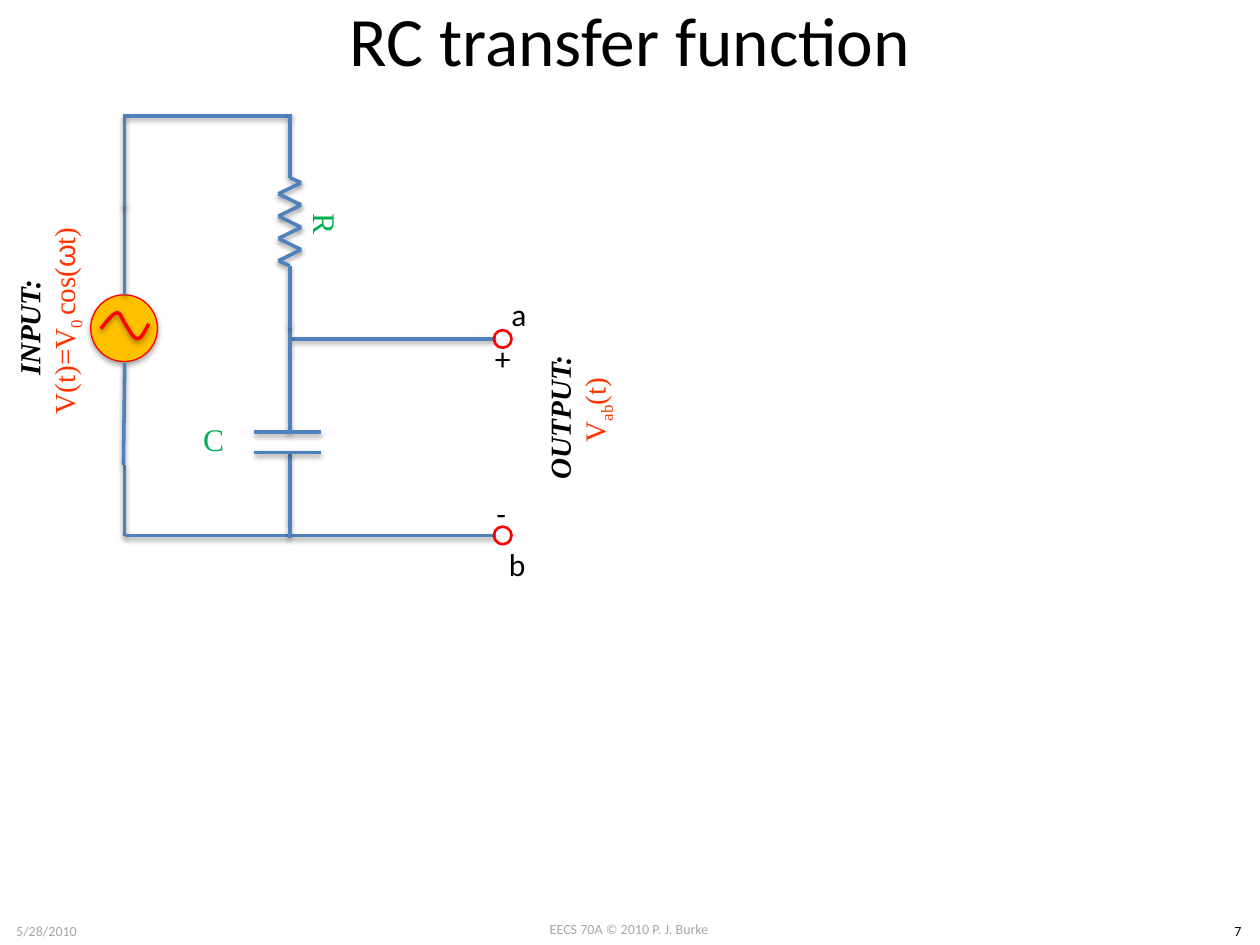
from itertools import pairwise

from lxml import etree
from pptx import Presentation
from pptx.dml.color import RGBColor
from pptx.enum import shapes, text
from pptx.oxml import ns
from pptx.util import Inches, Pt

COLORS = {"wire": "4F81BD", "red": "FF0000", "source": "FFC000", "signal": "FF3300",
          "part": "00B050", "footer": "A6A6A6", "black": "000000"}
LEFT_X, MID_X, PORT_X = 0.99, 2.3, 3.94
TOP_Y, A_Y, B_Y = 0.92, 2.69, 4.25

HEADING = {"size": 16.6, "name": "Times New Roman", "bold": True, "italic": True}
SIGNAL = {"size": 16.6, "name": "Times New Roman", "color": "signal"}
PART = {"size": 18, "name": "Times New Roman", "color": "part"}
PORT = {"size": 18}
FOOTER = {"size": 8, "color": "footer"}
SUBSCRIPT = {"baseline": -25}


def rgb(name):
    return RGBColor.from_string(COLORS[name])


def add_shadow(s, alpha=38, distance=1.6):
    """Give a shape a soft black shadow that falls straight down."""
    effects = etree.SubElement(s._element.spPr, ns.qn("a:effectLst"))
    outer = etree.SubElement(effects, ns.qn("a:outerShdw"), blurRad=str(Pt(3.1)),
                             dist=str(Pt(distance)), dir="5400000", rotWithShape="0")
    color = etree.SubElement(outer, ns.qn("a:srgbClr"), val=COLORS["black"])
    etree.SubElement(color, ns.qn("a:alpha"), val=str(alpha * 1000))


def add_wire(parent, start, end):
    s = parent.add_connector(shapes.MSO_CONNECTOR.STRAIGHT,
                             *(Inches(v) for v in (*start, *end)))
    s.line.color.rgb = rgb("wire")
    s.line.width = Pt(2)
    add_shadow(s)


def add_path(parent, *points):
    """Join the points, one wire for each pair of neighbours."""
    for start, end in pairwise(points):
        add_wire(parent, start, end)


def add_circle(parent, left, top, size, width, fill=None):
    s = parent.add_shape(shapes.MSO_SHAPE.OVAL,
                         *(Inches(v) for v in (left, top, size, size)))
    s.line.color.rgb = rgb("red")
    s.line.width = Pt(width)
    if fill:
        s.fill.solid()
        s.fill.fore_color.rgb = rgb(fill)
        add_shadow(s, 35, 1.8)
    else:
        s.fill.background()
        s.shadow.inherit = False


def add_wave(parent):
    """Draw the sine sign: a start point, then three points for each curve."""
    points = [(0.8, 2.61), (0.85, 2.55), (0.89, 2.49), (0.93, 2.48), (0.96, 2.48),
              (0.97, 2.54), (1, 2.58), (1.02, 2.61), (1.06, 2.69), (1.09, 2.69),
              (1.12, 2.69), (1.15, 2.63), (1.18, 2.57)]
    points = [(Inches(x), Inches(y)) for x, y in points]
    builder = parent.build_freeform(*points[0])
    builder.add_line_segments(points[1:], close=False)
    s = builder.convert_to_shape()
    outline = s._element.find(".//" + ns.qn("a:path"))
    segments = outline.findall(ns.qn("a:lnTo"))
    for i in range(0, len(segments), 3):
        curve = etree.SubElement(outline, ns.qn("a:cubicBezTo"))
        for segment in segments[i:i + 3]:
            curve.append(segment[0])
            outline.remove(segment)
    s.fill.background()
    s.line.color.rgb = rgb("red")
    s.line.width = Pt(2)
    add_shadow(s)


def add_run(p, words, size=18, name="Calibri", color="black", baseline=0, **style):
    r = p.add_run()
    r.text = words
    for key, value in {"size": Pt(size), "name": name, **style}.items():
        setattr(r.font, key, value)
    r.font.color.rgb = rgb(color)
    if baseline:
        r._r.get_or_add_rPr().set("baseline", str(baseline * 1000))


def add_text(parent, box, *paragraphs, align="CENTER", anchor="MIDDLE", rotation=0,
             grow=False, wrap=True):
    """Add a text box; each paragraph is a list of (words, format) runs."""
    s = parent.add_textbox(*(Inches(v) for v in box))
    s.rotation = rotation
    tf = s.text_frame
    tf.word_wrap = wrap
    tf.vertical_anchor = text.MSO_ANCHOR[anchor]
    tf.auto_size = text.MSO_AUTO_SIZE.SHAPE_TO_FIT_TEXT if grow else text.MSO_AUTO_SIZE.NONE
    for i, runs in enumerate(paragraphs):
        p = tf.add_paragraph() if i else tf.paragraphs[0]
        p.alignment = text.PP_ALIGN[align]
        for words, style in runs:
            add_run(p, words, **style)


def add_page_text(parent):
    for box, words, style in (
            ((3.83, 7.26, 2.33, 0.24), "EECS 70A © 2010 P. J. Burke", FOOTER),
            ((0, 7.27, 0.74, 0.24), "5/28/2010", FOOTER),
            ((9.65, 7.27, 0.35, 0.24), "7", {"size": 8})):
        add_text(parent, box, [(words, style)], anchor="TOP", grow=True)
    add_text(parent, (0.5, 0, 9, 0.62), [("RC transfer function", {"size": 39.6})])


def add_source(parent):
    group = parent.add_group_shape().shapes
    add_circle(group, 0.72, 2.34, 0.53, 0.75, "source")
    add_wave(group)
    add_wire(group, (0.98, 3.69), (LEFT_X, 2.88))
    add_wire(group, (LEFT_X, 2.34), (LEFT_X, 1.62))


def add_resistor(parent):
    group = parent.add_group_shape().shapes
    add_text(group, (1.99, 1.41, 1.19, 0.73), [("R", PART)], rotation=90)
    zigzag = [((2.39, 2.21)[i % 2], 1.45 + i * 0.62 / 7) for i in range(8)]
    add_path(group, (MID_X, TOP_Y), (MID_X, 1.41), *zigzag, (MID_X, 2.11), (MID_X, 2.6))


def add_capacitor(parent):
    add_path(parent, (MID_X, 2.58), (MID_X, 2.8), (MID_X, 3.43))
    add_path(parent, (MID_X, 3.59), (MID_X, 4.13), (MID_X, 4.27))
    add_text(parent, (1.1, 3.12, 1.19, 0.73), [("C", PART)])
    for y in (3.43, 3.59):
        add_wire(parent, (2.55, y), (2.02, y))


def add_ports(parent):
    for y in (A_Y, B_Y):
        add_wire(parent, (2.32, y), (PORT_X, y))
        add_circle(parent, 3.92, y - 0.07, 0.14, 1.5)
    for words, left, top, width in (("a", 3.96, 2.29, 0.32), ("b", 3.94, 4.28, 0.34),
                                    ("+", 3.83, 2.64, 0.33), ("-", 3.84, 3.87, 0.28)):
        add_text(parent, (left, top, width, 0.4), [(words, PORT)], align="LEFT",
                 anchor="TOP", grow=True, wrap=False)


def add_signal(parent, left, top, heading, runs):
    add_text(parent, (left, top, 2.11, 0.61), [(heading, HEADING)],
             [(words, {**SIGNAL, **style}) for words, style in runs], rotation=270)


def main():
    prs = Presentation()
    prs.slide_width, prs.slide_height = Inches(10), Inches(7.5)
    parent = prs.slides.add_slide(prs.slide_layouts[6]).shapes
    add_page_text(parent)
    add_path(parent, (LEFT_X, 3.69), (LEFT_X, B_Y), (2.31, B_Y))
    add_signal(parent, -0.67, 2.24, "INPUT:  ",
               [("V(t)=V", {}), ("0 ", SUBSCRIPT), ("cos(", {}),
                ("ω", {"name": "Arial"}), ("t)", {})])
    add_source(parent)
    add_path(parent, (2.32, TOP_Y), (0.98, TOP_Y))
    add_path(parent, (LEFT_X, 1.64), (LEFT_X, TOP_Y))
    add_ports(parent)
    add_signal(parent, 3.54, 2.95, "OUTPUT:  ",
               [("V", {}), ("ab", SUBSCRIPT), ("(t)", {})])
    add_capacitor(parent)
    add_resistor(parent)
    prs.save("out.pptx")


if __name__ == "__main__":
    main()
